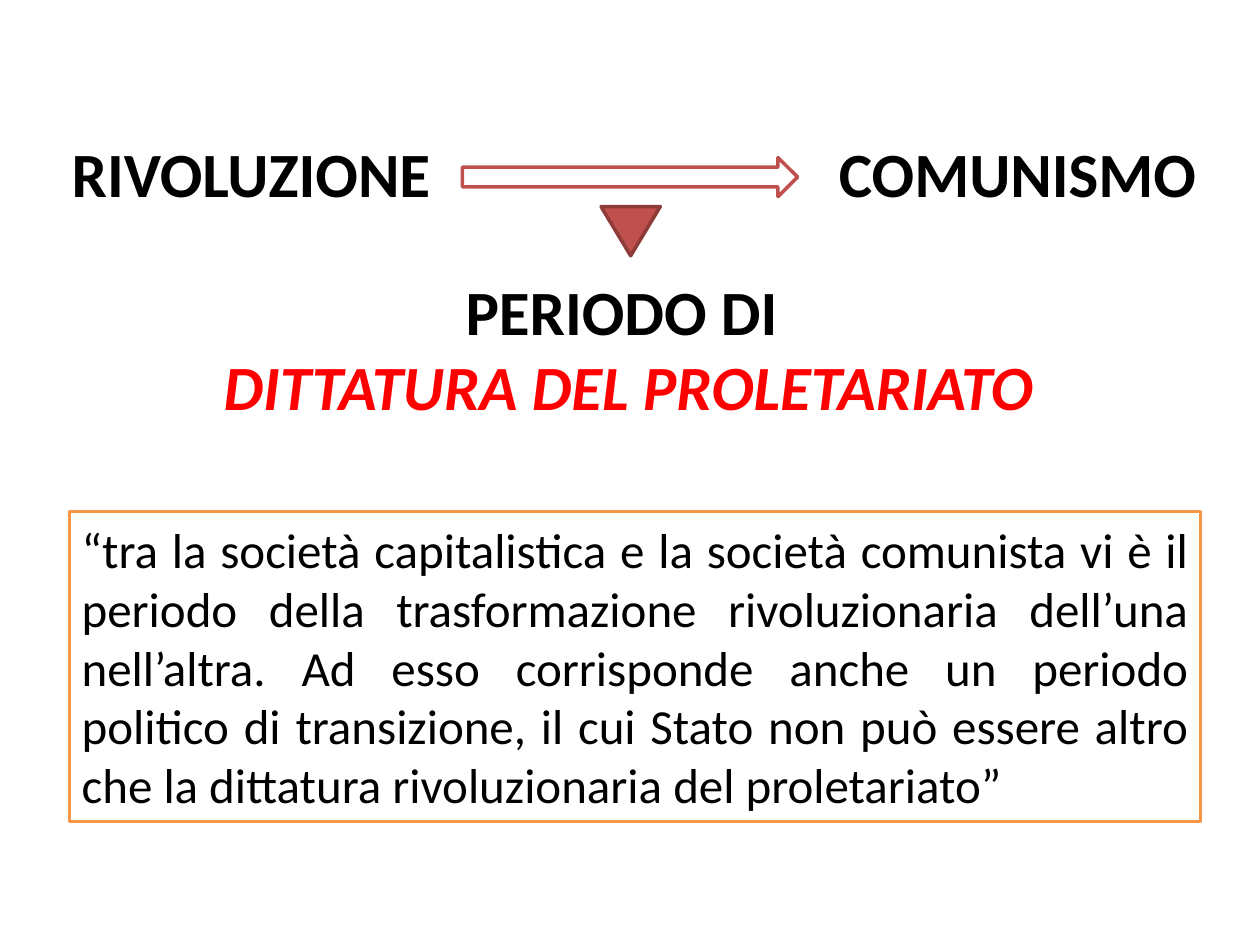
import pptx
import pptx.dml.color
import pptx.enum.shapes
import pptx.enum.text
import pptx.util

Inches = pptx.util.Inches
Pt = pptx.util.Pt
RGBColor = pptx.dml.color.RGBColor
SHAPE = pptx.enum.shapes.MSO_SHAPE
ALIGN = pptx.enum.text.PP_ALIGN

BLACK = RGBColor(0x00, 0x00, 0x00)
WHITE = RGBColor(0xFF, 0xFF, 0xFF)
RED = RGBColor(0xFF, 0x00, 0x00)
ORANGE = RGBColor(0xF7, 0x96, 0x46)
BRICK = RGBColor(0xC0, 0x50, 0x4D)
DARK_BRICK = RGBColor(0x8E, 0x3B, 0x39)

HEADING = {"name": "Calibri", "size": Pt(36), "bold": True}
EMPHASIS = {**HEADING, "italic": True}
BODY = {"name": "Calibri", "size": Pt(28)}

QUOTE = (
    "“tra la società capitalistica e la società comunista vi è il periodo "
    "della trasformazione rivoluzionaria dell’una nell’altra. Ad esso "
    "corrisponde anche un periodo politico di transizione, il cui Stato non "
    "può essere altro che la dittatura rivoluzionaria del proletariato”"
)


def add_outlined_shape(kind, box, fill, line):
    shape = slide.shapes.add_shape(kind, *map(Inches, box))
    shape.shadow.inherit = False
    shape.fill.solid()
    shape.fill.fore_color.rgb = fill
    shape.line.color.rgb = line
    shape.line.width = Pt(2)
    return shape


def write_paragraph(paragraph, text, alignment, color, font_format):
    paragraph.alignment = alignment
    run = paragraph.add_run()
    run.text = text
    run.font.color.rgb = color
    for name, value in font_format.items():
        setattr(run.font, name, value)


presentation = pptx.Presentation()
presentation.slide_width = Inches(10)
presentation.slide_height = Inches(7.5)
slide = presentation.slides.add_slide(presentation.slide_layouts[6])

# Quotation in a framed box
quote_box = add_outlined_shape(SHAPE.RECTANGLE, (0.55, 4.06, 8.98, 2.46), WHITE, ORANGE)
quote_box.text_frame.word_wrap = True
write_paragraph(quote_box.text_frame.paragraphs[0], QUOTE, ALIGN.JUSTIFY, BLACK, BODY)

# Start, end and transition headings
headings = [
    ((0.47, 1.02, 3.08, 0.71), ALIGN.LEFT, [("RIVOLUZIONE", BLACK, HEADING)]),
    ((6.56, 1.02, 3.07, 0.71), ALIGN.LEFT, [("COMUNISMO", BLACK, HEADING)]),
    ((1.64, 2.11, 6.7, 1.31), ALIGN.CENTER, [
        ("PERIODO DI ", BLACK, HEADING),
        ("DITTATURA DEL PROLETARIATO", RED, EMPHASIS),
    ]),
]
for box, alignment, lines in headings:
    text_frame = slide.shapes.add_textbox(*map(Inches, box)).text_frame
    text_frame.word_wrap = False
    text_frame.auto_size = pptx.enum.text.MSO_AUTO_SIZE.SHAPE_TO_FIT_TEXT
    for index, (text, color, font_format) in enumerate(lines):
        paragraph = text_frame.add_paragraph() if index else text_frame.paragraphs[0]
        write_paragraph(paragraph, text, alignment, color, font_format)

# Arrow from revolution to communism, and pointer to the transition
add_outlined_shape(SHAPE.RIGHT_ARROW, (3.67, 1.25, 2.66, 0.31), WHITE, BRICK)
pointer = add_outlined_shape(
    SHAPE.ISOSCELES_TRIANGLE, (4.77, 1.64, 0.47, 0.39), BRICK, DARK_BRICK)
pointer.rotation = 180

presentation.save("out.pptx")
